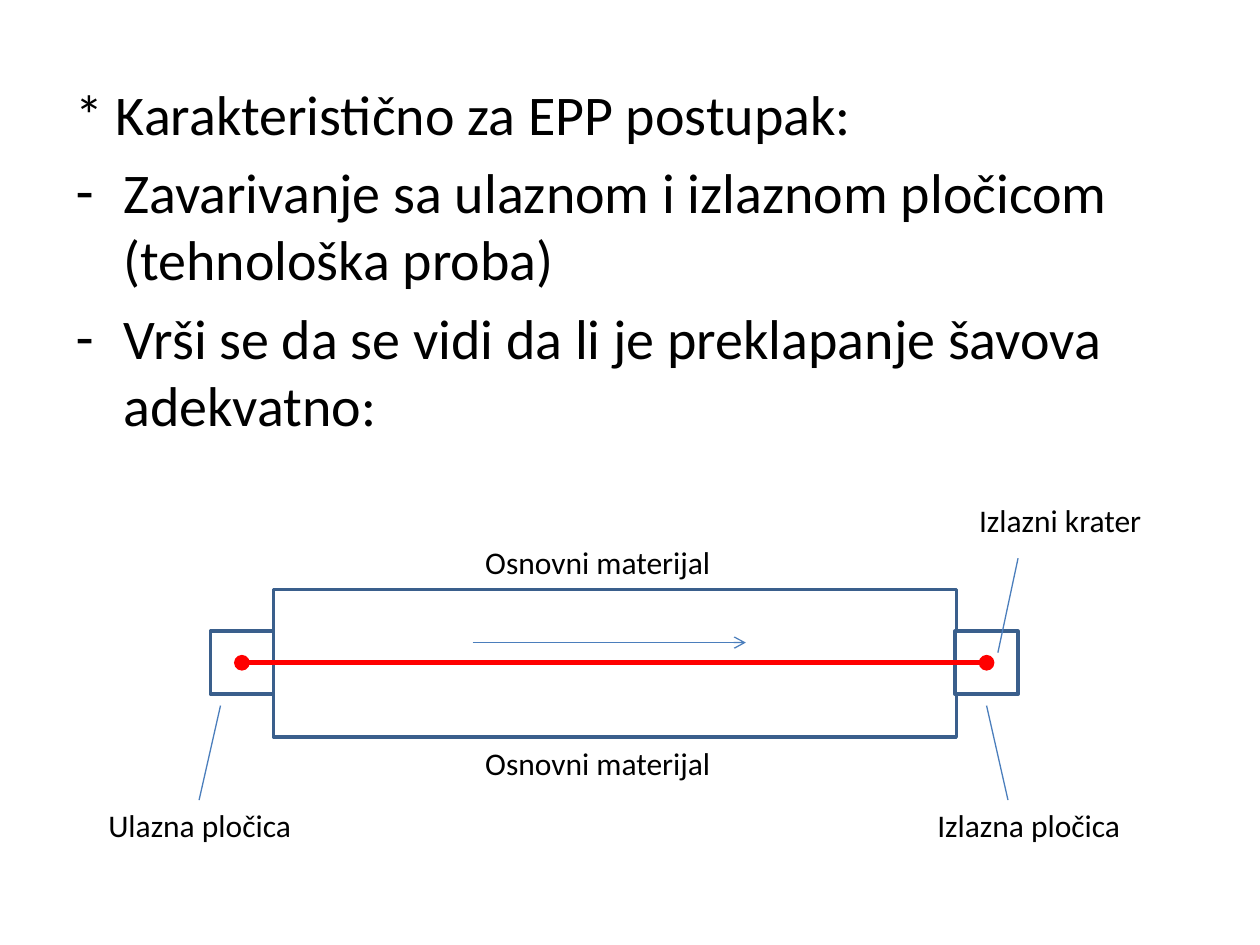
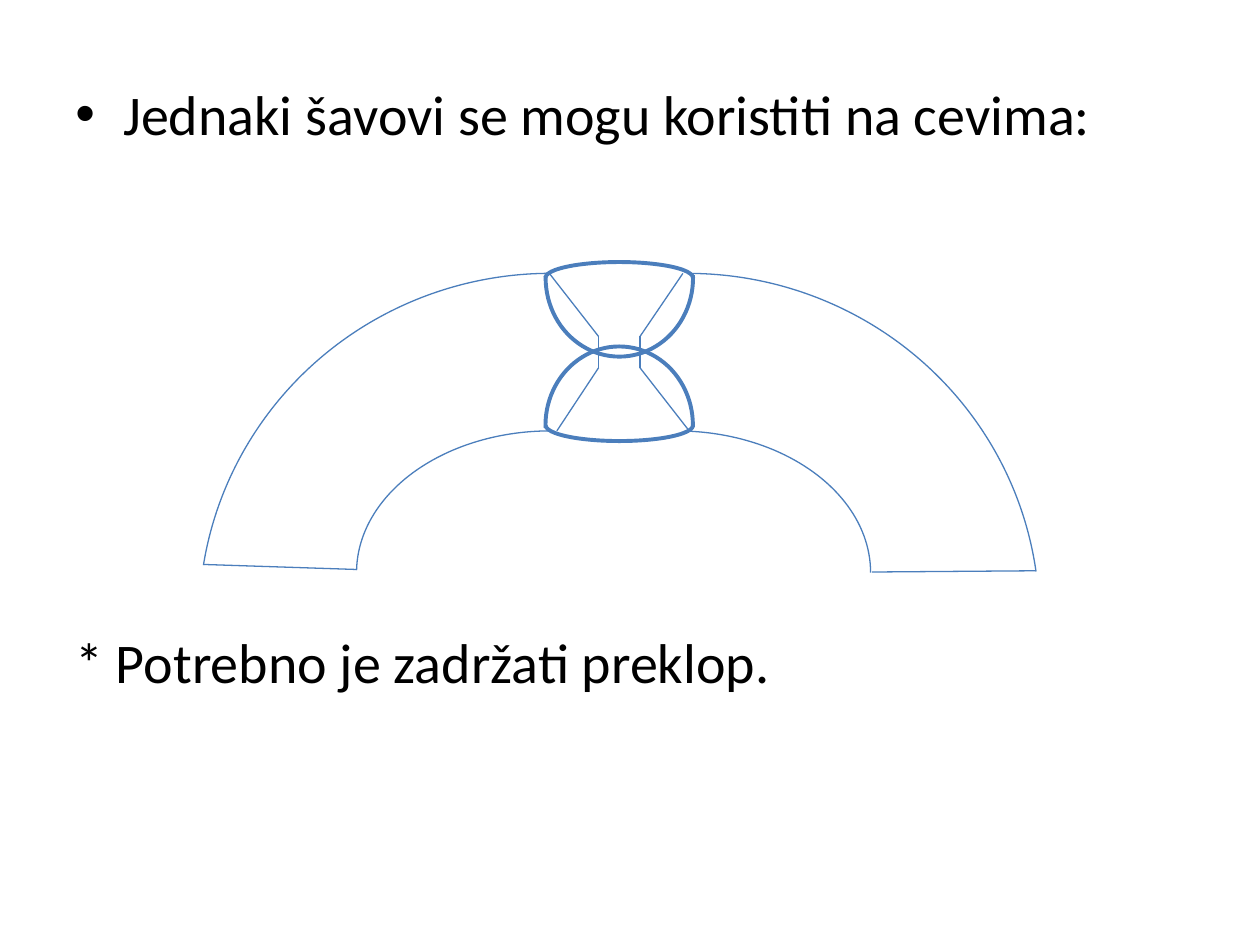
"""Build two slides on test plates and overlapping welds in pipes."""
from dataclasses import dataclass

from lxml import etree
from pptx import Presentation
from pptx import util as u
from pptx.dml.color import RGBColor
from pptx.enum import shapes, text
from pptx.oxml.ns import qn
from pptx.util import Inches

BLACK = RGBColor(0x00, 0x00, 0x00)
WHITE = RGBColor(0xFF, 0xFF, 0xFF)
RED = RGBColor(0xFF, 0x00, 0x00)
BLUE = RGBColor(0x4B, 0x7E, 0xBC)
DARK_BLUE = RGBColor(0x3A, 0x5F, 0x8C)
FONT = "Calibri"
THIN, BEAD, EDGE, WELD = 0.75, 2.25, 2, 3
BODY_GAP = 6.4
PIPE_GAP = 274.6


@dataclass(frozen=True)
class BodyLine:
    """A line of body text with its bullet and the space above it."""
    words: str
    bullet: str = ""
    space_before: float = BODY_GAP


@dataclass(frozen=True)
class Plate:
    """A rectangular piece of metal."""
    left: float
    top: float
    width: float
    height: float


@dataclass(frozen=True)
class Label:
    """A centred caption."""
    words: str
    left: float
    top: float


@dataclass(frozen=True)
class Stroke:
    """A straight line with optional end marks."""
    x1: float
    y1: float
    x2: float
    y2: float
    color: RGBColor = BLUE
    weight: float = THIN
    head: str = ""
    tail: str = ""


@dataclass(frozen=True)
class Arc:
    """Part of an ellipse between two angles in degrees."""
    left: float
    top: float
    width: float
    height: float
    start: float
    end: float
    weight: float = THIN
    rotation: float = 0


TEST_LINES = [
    BodyLine("* Karakteristično za EPP postupak:"),
    BodyLine("Zavarivanje sa ulaznom i izlaznom pločicom (tehnološka proba)", "-"),
    BodyLine("Vrši se da se vidi da li je preklapanje šavova adekvatno:", "-"),
]
PLATES = [
    Plate(2.17, 4.68, 5.42, 1.17),
    Plate(1.67, 5.01, 0.5, 0.5),
    Plate(7.58, 5.01, 0.5, 0.5),
]
TEST_STROKES = [
    Stroke(1.92, 5.26, 7.83, 5.26, RED, WELD, "oval", "oval"),
    Stroke(3.75, 5.1, 5.92, 5.1, tail="arrow"),
    Stroke(1.58, 6.35, 1.75, 5.6),
    Stroke(8, 6.35, 7.83, 5.6),
    Stroke(7.92, 5.18, 8.08, 4.43),
]
LABELS = [
    Label("Osnovni materijal", 3.33, 4.26),
    Label("Osnovni materijal", 3.33, 5.86),
    Label("Ulazna pločica", 0.17, 6.35),
    Label("Izlazna pločica", 6.75, 6.35),
    Label("Izlazni krater", 7, 3.93),
]

PIPE_LINES = [
    BodyLine("Jednaki šavovi se mogu koristiti na cevima:", "•"),
    BodyLine("* Potrebno je zadržati preklop.", space_before=PIPE_GAP),
]
PIPE_WALLS = [
    Arc(2.67, 2.17, 5.58, 5.5, 270, 352.09),
    Arc(1.58, 2.17, 5.58, 5.5, 188.95, 269.7),
    Arc(3.83, 3.42, 3.08, 2.25, 273.99, 0),
    Arc(2.83, 3.42, 3.08, 2.25, 180.77, 270.24),
]
WELD_BEADS = [
    Arc(4.33, top, 1.17, height, start, end, BEAD, rotation)
    for top, height, start, end, rotation in [
        (2.08, 0.25, 180.37, 0, 0),
        (1.58, 1.25, 177.9, 1.54, 180),
        (3.25, 0.25, 180.37, 0, 180),
        (2.75, 1.25, 177.9, 1.54, 0),
    ]
]
PIPE_STROKES = [
    Stroke(4.36, 2.17, 4.75, 2.67),
    Stroke(5.08, 2.92, 5.47, 3.42),
    Stroke(4.75, 2.92, 4.42, 3.42),
    Stroke(5.42, 2.17, 5.08, 2.67),
    Stroke(4.75, 2.67, 4.75, 2.92),
    Stroke(5.08, 2.67, 5.08, 2.92),
    Stroke(1.62, 4.48, 2.83, 4.52),
    Stroke(6.92, 4.54, 8.22, 4.53),
]


def style_para(para, size: float) -> None:
    """Give the runs of a paragraph the shared font."""
    for span in para.runs:
        span.font.name = FONT
        span.font.size = u.Pt(size)
        span.font.color.rgb = BLACK


def add_body(page, lines: list[BodyLine]) -> None:
    """Write the main text with hanging indents."""
    box = page.shapes.add_textbox(Inches(0.5), Inches(0.58), Inches(9), Inches(6.12))
    frame = box.text_frame
    frame.word_wrap = True
    frame.text = "\n".join(line.words for line in lines)
    for para, line in zip(frame.paragraphs, lines):
        style_para(para, 32)
        para.space_before = u.Pt(line.space_before)
        props = para._p.get_or_add_pPr()
        props.set("marL", str(Inches(0.38)))
        props.set("indent", str(-Inches(0.38)))
        if line.bullet:
            etree.SubElement(props, qn("a:buFont"), typeface="Arial")
            etree.SubElement(props, qn("a:buChar"), char=line.bullet)
        else:
            etree.SubElement(props, qn("a:buNone"))


def add_plate(group, plate: Plate) -> None:
    """Draw a white plate with a dark edge."""
    shape = group.shapes.add_shape(
        shapes.MSO_SHAPE.RECTANGLE, Inches(plate.left), Inches(plate.top),
        Inches(plate.width), Inches(plate.height))
    shape.shadow.inherit = False
    shape.fill.solid()
    shape.fill.fore_color.rgb = WHITE
    shape.line.color.rgb = DARK_BLUE
    shape.line.width = u.Pt(EDGE)


def add_arc(group, arc: Arc) -> None:
    """Draw an unfilled arc."""
    shape = group.shapes.add_shape(
        shapes.MSO_SHAPE.ARC, Inches(arc.left), Inches(arc.top),
        Inches(arc.width), Inches(arc.height))
    for index, degrees in enumerate((arc.start, arc.end)):
        shape.adjustments[index] = degrees * 0.6
    shape.rotation = arc.rotation
    shape.shadow.inherit = False
    shape.fill.background()
    shape.line.color.rgb = BLUE
    shape.line.width = u.Pt(arc.weight)


def add_stroke(group, stroke: Stroke) -> None:
    """Draw a straight line with its end marks."""
    connector = group.shapes.add_connector(
        shapes.MSO_CONNECTOR.STRAIGHT, Inches(stroke.x1), Inches(stroke.y1),
        Inches(stroke.x2), Inches(stroke.y2))
    connector.line.color.rgb = stroke.color
    connector.line.width = u.Pt(stroke.weight)
    props = connector.element.spPr
    outline = props.find(qn("a:ln"))
    for tag, mark in (("a:headEnd", stroke.head), ("a:tailEnd", stroke.tail)):
        if mark:
            etree.SubElement(outline, qn(tag), type=mark)
    etree.SubElement(props, qn("a:effectLst"))


def add_label(group, label: Label) -> None:
    """Write a centred caption."""
    box = group.shapes.add_textbox(
        Inches(label.left), Inches(label.top), Inches(2.83), Inches(0.4))
    frame = box.text_frame
    frame.word_wrap = True
    frame.auto_size = text.MSO_AUTO_SIZE.SHAPE_TO_FIT_TEXT
    frame.text = label.words
    para = frame.paragraphs[0]
    para.alignment = text.PP_ALIGN.CENTER
    style_para(para, 18)


def add_page(deck, lines: list[BodyLine]):
    """Add a slide with body text and return the group for its drawing."""
    page = deck.slides.add_slide(deck.slide_layouts[6])
    add_body(page, lines)
    return page.shapes.add_group_shape()


def main() -> None:
    """Build and save the deck."""
    deck = Presentation()
    deck.slide_width, deck.slide_height = Inches(10), Inches(7.5)

    test_weld = add_page(deck, TEST_LINES)
    for plate in PLATES:
        add_plate(test_weld, plate)
    for stroke in TEST_STROKES:
        add_stroke(test_weld, stroke)
    for label in LABELS:
        add_label(test_weld, label)

    pipe = add_page(deck, PIPE_LINES)
    for arc in PIPE_WALLS + WELD_BEADS:
        add_arc(pipe, arc)
    for stroke in PIPE_STROKES:
        add_stroke(pipe, stroke)

    deck.save("out.pptx")


if __name__ == "__main__":
    main()
